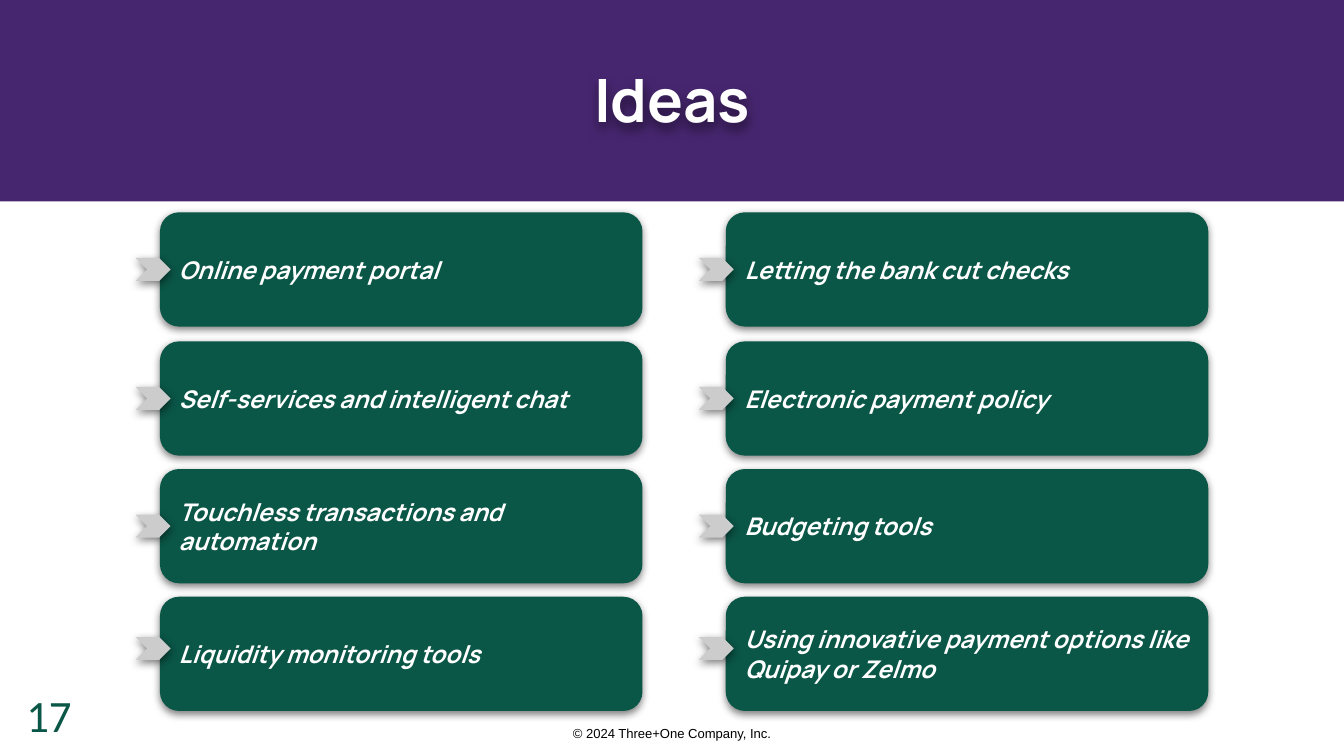
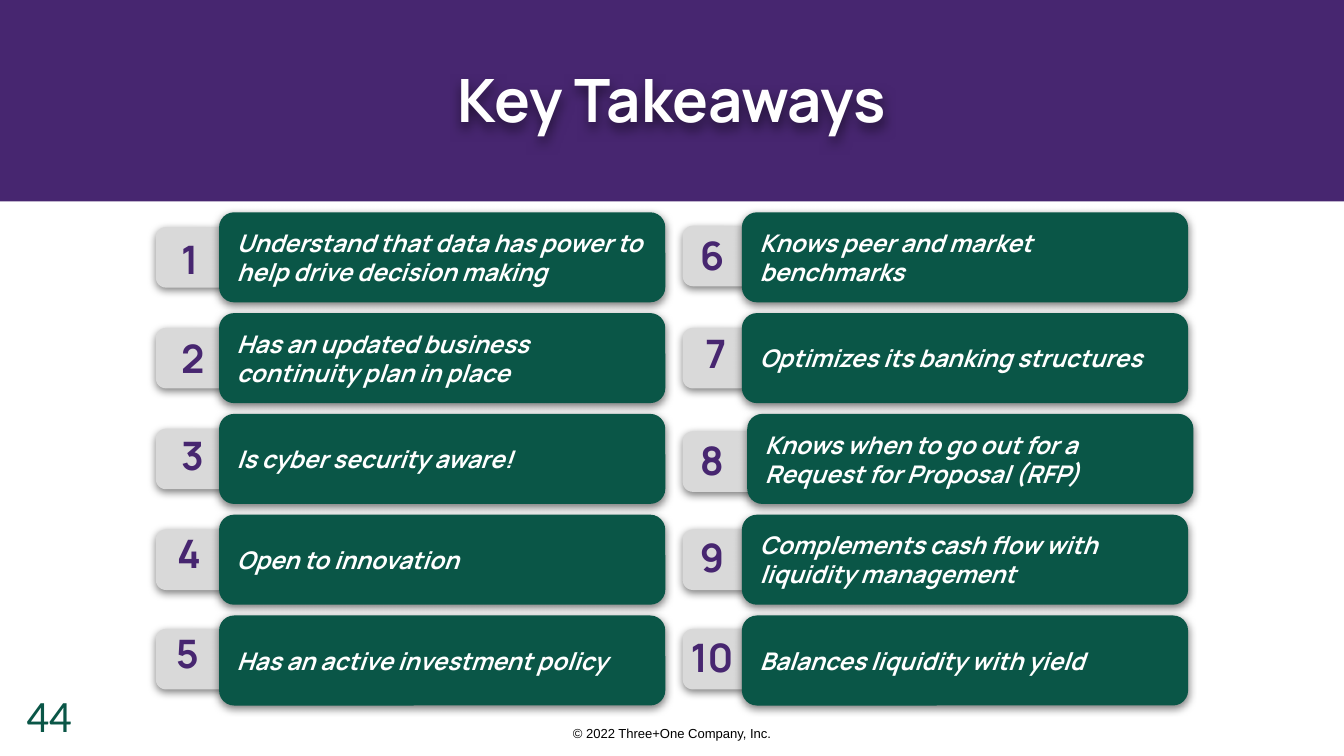
from lxml import etree
from pptx import Presentation
from pptx import util as u
from pptx.dml.color import RGBColor
from pptx.enum import shapes, text
from pptx.oxml.ns import qn

PURPLE, GREEN, WHITE, BLACK = "472670", "0A5647", "FFFFFF", "000000"
SILVER, PALE = "CCCCCC", "D9D9D9"
HEAD, NUM, FOOT = "Manrope", "Calibri", "Arial"
KIND, ALIGN, ANCHOR = shapes.MSO_SHAPE, text.PP_ALIGN, text.MSO_ANCHOR

IDEAS = [
    ["Online payment portal", "Self-services and intelligent chat",
     "Touchless transactions and automation", "Liquidity monitoring tools"],
    ["Letting the bank cut checks", "Electronic payment policy",
     "Budgeting tools",
     "Using innovative payment options like Quipay or Zelmo"],
]
IDEA_COLS = [(119, 101), (540, 520)]  # card left, arrow left
IDEA_ROWS = [(158, 192), (254, 288), (349, 383), (444, 474)]  # card top, arrow top

# Each point: words, card left, tag top, number left, number top
POINTS = [
    (116, [
        ("Understand that data has power to help drive decision making",
         163, 169, 125, 165),
        ("Has an updated business continuity plan in place",
         163, 244, 125, 239),
        ("Is cyber security aware!", 163, 319, 125, 311),
        ("Open to innovation", 163, 394, 122, 384),
        ("Has an active investment policy", 163, 468, 121, 458),
    ]),
    (508, [
        ("Knows peer and market benchmarks", 552, 168, 511, 162),
        ("Optimizes its banking structures", 552, 244, 515, 235),
        ("Knows when to go out for a Request for Proposal (RFP)",
         556, 321, 511, 315),
        ("Complements cash flow with liquidity management",
         552, 394, 511, 387),
        ("Balances liquidity with yield", 552, 468, 504, 461),
    ]),
]


def px(n):
    """Turn px, 100 to the inch, into EMU."""
    return u.Emu(n * 9144)


def tint(code):
    return RGBColor.from_string(code)


class Deck:
    """Holds the style and the current slide."""

    def __init__(self):
        self.prs = Presentation()
        self.prs.slide_width = px(1000)
        self.prs.slide_height = u.Emu(px(1000) * 9 // 16)
        self.slide = None

    def page(self, title, number, year):
        """Start a slide with its band, title, number and footer."""
        self.slide = self.prs.slides.add_slide(self.prs.slide_layouts[6])
        self.shape(KIND.RECTANGLE, (0, 0, 1000, 150), PURPLE)
        head = self.label((84, 37, 832, 86), title, HEAD, 32, WHITE,
                          align=ALIGN.CENTER, bold=True)
        self.shade(head, blur=6, dist=3)
        self.label((0, 374, 73, 188), number, NUM, 24, GREEN,
                   align=ALIGN.CENTER, anchor=ANCHOR.BOTTOM)
        self.label((402, 534, 196, 32), f"© {year} Three+One Company, Inc.",
                   FOOT, 7, BLACK, align=ALIGN.CENTER, grow=True)

    def shade(self, item, blur=4.5, dist=1.5):
        """Drop a soft black shadow straight down; sizes in points."""
        item.shadow.inherit = False
        fx = item._element.spPr.find(qn("a:effectLst"))
        drop = etree.SubElement(
            fx, qn("a:outerShdw"), blurRad=str(u.Pt(blur)),
            dist=str(u.Pt(dist)), dir="5400000", algn="bl", rotWithShape="0")
        hue = etree.SubElement(drop, qn("a:srgbClr"), val=BLACK)
        etree.SubElement(hue, qn("a:alpha"), val="50000")

    def shape(self, kind, box, fill, shade=False):
        item = self.slide.shapes.add_shape(kind, *map(px, box))
        item.fill.solid()
        item.fill.fore_color.rgb = tint(fill)
        item.line.fill.background()
        item.shadow.inherit = False
        if shade:
            self.shade(item)
        return item

    def words(self, item, line, font, size, color, align=ALIGN.LEFT,
              anchor=ANCHOR.TOP, bold=False, slant=False):
        """Put one styled line of text into a shape or box."""
        frame = item.text_frame
        frame.word_wrap = True
        frame.vertical_anchor = anchor
        frame.margin_left = frame.margin_right = px(10)
        frame.margin_top = frame.margin_bottom = px(10)
        para = frame.paragraphs[0]
        para.alignment = align
        run = para.add_run()
        run.text = line
        face = run.font
        face.name, face.size = font, u.Pt(size)
        face.bold, face.italic = bold, slant
        face.color.rgb = tint(color)

    def label(self, box, line, font, size, color, grow=False, **style):
        item = self.slide.shapes.add_textbox(*map(px, box))
        self.words(item, line, font, size, color, **style)
        if grow:
            item.text_frame.auto_size = text.MSO_AUTO_SIZE.SHAPE_TO_FIT_TEXT
        return item

    def panel(self, box, fill):
        item = self.shape(KIND.ROUNDED_RECTANGLE, box, fill, shade=True)
        item.adjustments[0] = 0.167
        return item

    def card(self, box, line):
        self.words(self.panel(box, GREEN), line, HEAD, 13, WHITE,
                   anchor=ANCHOR.MIDDLE, bold=True, slant=True)

    def arrow(self, left, top):
        self.shape(KIND.CHEVRON, (left, top, 26, 17), SILVER, shade=True)

    def tag(self, left, top, number, x, y):
        """Draw a pale tab with its number at x, y."""
        self.panel((left, top, 57, 45), PALE)
        wide = 24 if number < 10 else 57
        self.label((x, y, wide, 56), str(number), HEAD, 21, PURPLE,
                   grow=True, bold=True)


def ideas(deck):
    deck.page("Ideas", "17", 2024)
    for (left, tip), column in zip(IDEA_COLS, IDEAS):
        for (top, mid), line in zip(IDEA_ROWS, column):
            deck.card((left, top, 359, 85), line)
            deck.arrow(tip, mid)


def points(deck):
    deck.page("Key Takeaways", "44", 2022)
    number = 0
    for edge, column in POINTS:
        for row, (line, left, top, x, y) in enumerate(column):
            number += 1
            deck.tag(edge, top, number, x, y)
            deck.card((left, 158 + 75 * row, 332, 67), line)


def main():
    deck = Deck()
    ideas(deck)
    points(deck)
    deck.prs.save("out.pptx")


if __name__ == "__main__":
    main()
